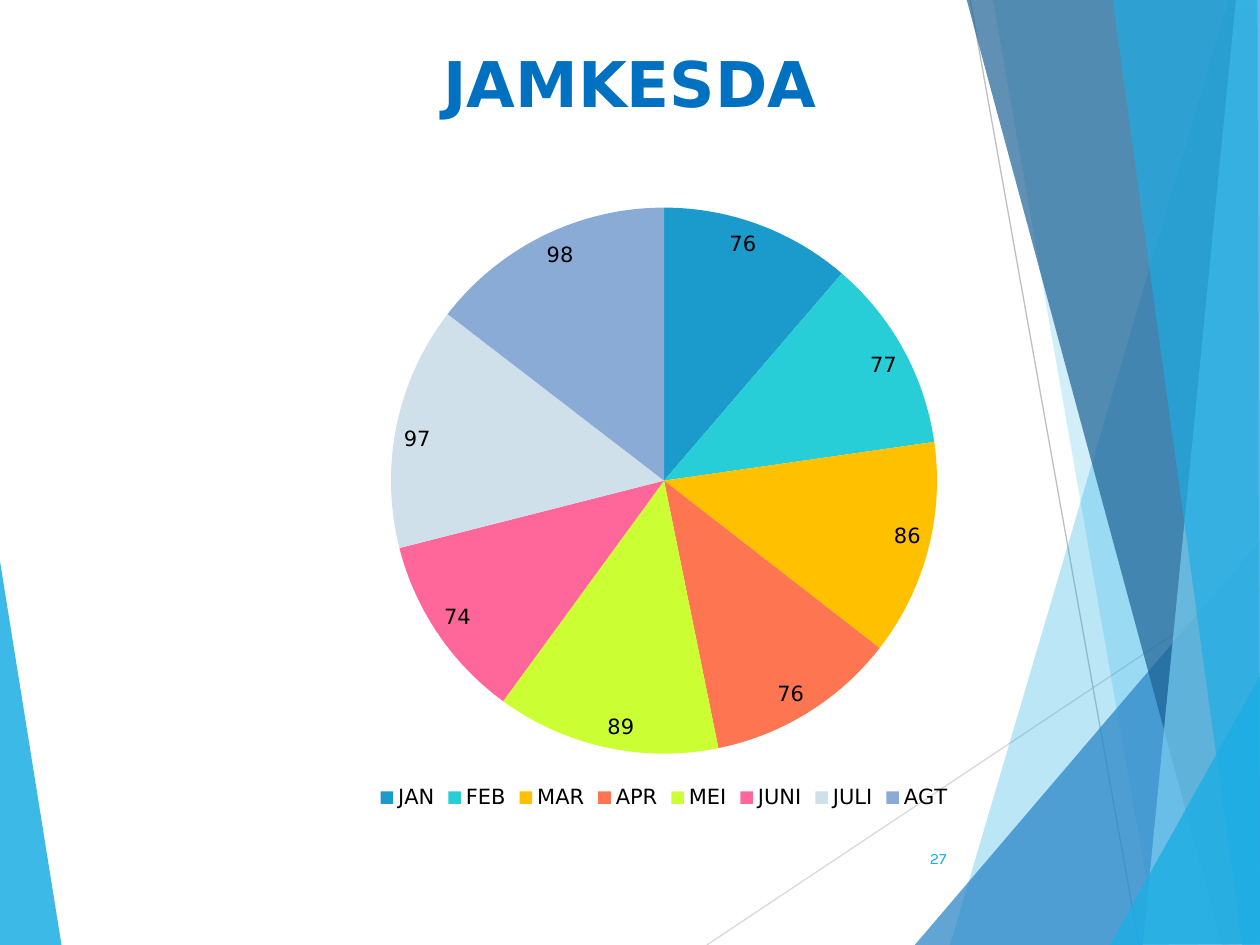
from typing import NamedTuple

import pptx
import pptx.chart.data
import pptx.dml.color
import pptx.enum.chart
import pptx.enum.shapes
import pptx.enum.text
import pptx.oxml.ns
import pptx.util
from lxml import etree

Inches = pptx.util.Inches
Pt = pptx.util.Pt
Align = pptx.enum.text.PP_ALIGN
Anchor = pptx.enum.text.MSO_ANCHOR
qn = pptx.oxml.ns.qn


class Facet(NamedTuple):
    """A see-through polygon; alpha is in percent."""
    fill: str
    alpha: int
    points: list[tuple[float, float]]


class Ray(NamedTuple):
    color: str
    start: tuple[float, float]
    end: tuple[float, float]


class Slice(NamedTuple):
    month: str
    value: int
    color: str


LEFT = Facet("1CADE4", 85, [(-0.01, 4.39), (0.49, 7.51), (-0.01, 7.5)])
RAYS = [
    Ray("D9D9D9", (5.61, 7.5), (10.01, 4.57)),
    Ray("BFBFBF", (7.7, 0), (9.04, 7.5)),
]
FACETS = [
    Facet("1CADE4", 30, [(9.75, 0), (7.54, 7.5), (10.02, 7.51), (10.01, 0.01)]),
    Facet("1CADE4", 20, [(7.88, -0.01), (9.19, 7.5), (10.01, 7.5), (10.01, -0.01)]),
    Facet("2683C6", 72, [(7.26, 7.5), (10, 4.29), (10.01, 7.5)]),
    Facet("1D6294", 70, [(7.67, -0.01), (9.7, 7.5), (10.01, 7.49), (10.01, -0.01)]),
    Facet("77CEEF", 70, [(9.81, -0.01), (9.07, 7.5), (10.01, 7.5), (10, -0.01)]),
    Facet("1CADE4", 65, [(8.83, -0.01), (9.86, 7.5), (10, 7.5), (9.98, -0.01)]),
    Facet("1CADE4", 80, [(8.81, 7.5), (10.01, 5.35), (10.01, 7.49)]),
]
SLICES = [
    Slice("JAN", 76, "1A9BCC"),
    Slice("FEB", 77, "27CED7"),
    Slice("MAR", 86, "FFC000"),
    Slice("APR", 76, "FD7651"),
    Slice("MEI", 89, "CCFF33"),
    Slice("JUNI", 74, "FF6699"),
    Slice("JULI", 97, "CFE0EA"),
    Slice("AGT", 98, "8AABD6"),
]


def paint(target, color: str) -> None:
    """Give a fill a solid colour."""
    target.solid()
    target.fore_color.rgb = pptx.dml.color.RGBColor.from_string(color)


def style(font, name: str, size: float, color: str, bold: bool = False) -> None:
    font.name = name
    font.size = Pt(size)
    font.bold = bold
    paint(font.fill, color)


def draw_facet(slide, facet: Facet) -> None:
    first, *rest = [(Inches(x), Inches(y)) for x, y in facet.points]
    pen = slide.shapes.build_freeform(*first)
    pen.add_line_segments(rest, close=True)
    shape = pen.convert_to_shape()
    shape.shadow.inherit = False
    shape.line.fill.background()
    paint(shape.fill, facet.fill)
    tone = shape.fill._xPr.find(".//" + qn("a:srgbClr"))
    etree.SubElement(tone, qn("a:alpha"), val=str(facet.alpha * 1000))


def draw_ray(slide, ray: Ray) -> None:
    ends = [Inches(n) for n in ray.start + ray.end]
    line = slide.shapes.add_connector(
        pptx.enum.shapes.MSO_CONNECTOR.STRAIGHT, *ends)
    paint(line.line.fill, ray.color)
    line.line.width = Pt(0.75)
    etree.SubElement(line._element.spPr, qn("a:effectLst"))


def set_title(slide) -> None:
    title = slide.shapes.title
    title.left, title.top = Inches(0.5), Inches(0.3)
    title.width, title.height = Inches(9), Inches(1.25)
    frame = title.text_frame
    frame.text = "JAMKESDA"
    frame.vertical_anchor = Anchor.TOP
    line = frame.paragraphs[0]
    line.alignment = Align.CENTER
    style(line.runs[0].font, "DejaVu Sans", 36, "0070C0", bold=True)
    slide.shapes._spTree.append(title._element)  # in front of the facets


def draw_pie(slide) -> None:
    data = pptx.chart.data.CategoryChartData()
    data.categories = [part.month for part in SLICES]
    data.add_series("Series 1", [part.value for part in SLICES])
    chart = slide.shapes.add_chart(
        pptx.enum.chart.XL_CHART_TYPE.PIE, Inches(0.77), Inches(1.51),
        Inches(9), Inches(4.96), data).chart
    style(chart.font, "Karla", 18, "000000")
    chart.has_title = False
    chart.has_legend = True
    chart.legend.position = pptx.enum.chart.XL_LEGEND_POSITION.BOTTOM
    chart.legend.include_in_layout = False
    style(chart.legend.font, "DejaVu Sans", 12, "000000")

    plot = chart.plots[0]
    plot.vary_by_categories = True
    for i, part in enumerate(SLICES):
        point = plot.series[0].points[i]
        paint(point.format.fill, part.color)
        point.format.line.fill.background()
    plot.has_data_labels = True
    labels = plot.data_labels
    labels.show_value = True
    labels.show_percentage = False
    labels.position = pptx.enum.chart.XL_LABEL_POSITION.INSIDE_END
    style(labels.font, "DejaVu Sans", 12, "000000")


def add_number(slide) -> None:
    box = slide.shapes.add_textbox(
        Inches(7.05), Inches(6.61), Inches(0.56), Inches(0.4))
    frame = box.text_frame
    frame.word_wrap = True
    frame.vertical_anchor = Anchor.MIDDLE
    frame.text = "27"
    line = frame.paragraphs[0]
    line.alignment = Align.RIGHT
    style(line.runs[0].font, "Karla", 9, "1CADE4")


def main() -> None:
    deck = pptx.Presentation()
    deck.slide_width, deck.slide_height = Inches(10), Inches(7.5)
    slide = deck.slides.add_slide(deck.slide_layouts[5])
    paint(slide.background.fill, "FFFFFF")
    draw_facet(slide, LEFT)
    for ray in RAYS:
        draw_ray(slide, ray)
    for facet in FACETS:
        draw_facet(slide, facet)
    set_title(slide)
    draw_pie(slide)
    add_number(slide)
    deck.save("out.pptx")


if __name__ == "__main__":
    main()
